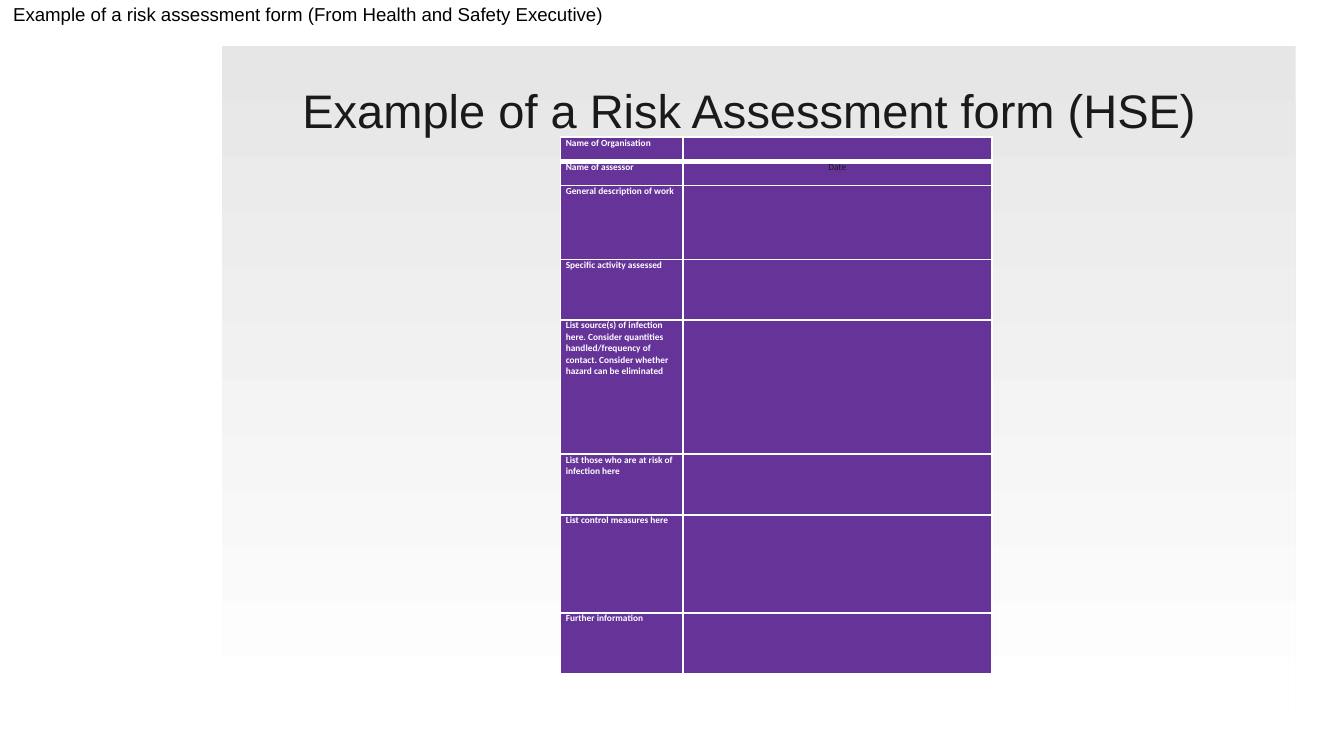
"""Build a slide showing a risk assessment form."""
import lxml.etree
import pptx
import pptx.dml.color
import pptx.enum.shapes
import pptx.enum.text
import pptx.oxml.ns
import pptx.util

Inches = pptx.util.Inches
Pt = pptx.util.Pt
RGB = pptx.dml.color.RGBColor
Align = pptx.enum.text.PP_ALIGN
Anchor = pptx.enum.text.MSO_ANCHOR
qn = pptx.oxml.ns.qn

WHITE = RGB(0xFF, 0xFF, 0xFF)
BLACK = RGB(0, 0, 0)
INK = RGB(0x1A, 0x1A, 0x1A)
GREY = RGB(0xE6, 0xE6, 0xE6)
PURPLE = RGB(0x66, 0x33, 0x99)

COLS = (0.91, 2.3)
ROWS = (
    ("Name of Organisation", "", 0.18),
    ("Name of assessor", "Date", 0.18),
    ("General description of work", "", 0.55),
    ("Specific activity assessed", "", 0.45),
    ("List source(s) of infection here. Consider quantities handled/frequency "
     "of contact. Consider whether hazard can be eliminated", "", 1),
    ("List those who are at risk of infection here", "", 0.45),
    ("List control measures here", "", 0.73),
    ("Further information", "", 0.45),
)


def style(para, face, size, color, bold=False):
    """Format every run of a paragraph."""
    for run in para.runs:
        run.font.name = face
        run.font.size = Pt(size)
        run.font.bold = bold
        run.font.color.rgb = color


def add_panel(slide, left, top, width, height):
    """Draw the shaded panel behind the form."""
    panel = slide.shapes.add_shape(
        pptx.enum.shapes.MSO_SHAPE.RECTANGLE,
        Inches(left), Inches(top), Inches(width), Inches(height))
    panel.shadow.inherit = False
    panel.line.fill.background()
    panel.fill.gradient()
    panel.fill.gradient_angle = 270
    for stop, color in zip(panel.fill.gradient_stops, (GREY, WHITE)):
        stop.color.rgb = color


def add_edges(cell, top, base):
    """Give a cell white borders, with the top and base widths in points."""
    props = cell._tc.get_or_add_tcPr()
    for tag, width in (("lnL", 1), ("lnR", 1), ("lnT", top), ("lnB", base)):
        edge = lxml.etree.SubElement(props, qn("a:" + tag), w=str(Pt(width)))
        fill = lxml.etree.SubElement(edge, qn("a:solidFill"))
        lxml.etree.SubElement(fill, qn("a:srgbClr"), val=str(WHITE))


def fill_cell(cell, text, color, bold, align):
    """Set the text and fill of one form cell."""
    cell.margin_left = cell.margin_right = Inches(0.04)
    cell.margin_top = cell.margin_bottom = 0
    cell.fill.solid()
    cell.fill.fore_color.rgb = PURPLE
    para = cell.text_frame.paragraphs[0]
    para.alignment = align
    if text:
        para.text = text
        style(para, "Calibri", 5, color, bold)
    else:
        lxml.etree.SubElement(para._p, qn("a:endParaRPr"), sz="500")


def add_form(slide, left, top):
    """Place the form table with its top left corner at the given point."""
    frame = slide.shapes.add_table(
        len(ROWS), len(COLS), Inches(left), Inches(top),
        Inches(sum(COLS)), Inches(sum(row[2] for row in ROWS)))
    table = frame.table
    for col, width in zip(table.columns, COLS):
        col.width = Inches(width)
    for idx, (label, entry, height) in enumerate(ROWS):
        table.rows[idx].height = Inches(height)
        first, last = table.cell(idx, 0), table.cell(idx, 1)
        for cell in (first, last):
            add_edges(cell, 3 if idx == 1 else 1, 3 if idx == 0 else 1)
        fill_cell(first, label, WHITE, True, Align.LEFT)
        fill_cell(last, entry, INK, False, Align.CENTER)


def add_title(slide, left, top, width, height):
    """Move the title placeholder to the front and format it."""
    title = slide.shapes.title
    slide.shapes._spTree.append(title._element)
    title.left, title.top = Inches(left), Inches(top)
    title.width, title.height = Inches(width), Inches(height)
    frame = title.text_frame
    frame.text = "Example of a Risk Assessment form (HSE)"
    frame.auto_size = pptx.enum.text.MSO_AUTO_SIZE.NONE
    frame.vertical_anchor = Anchor.BOTTOM
    frame.margin_left = frame.margin_right = 0
    frame.margin_top = frame.margin_bottom = 0
    para = frame.paragraphs[0]
    para.alignment = Align.LEFT
    para.line_spacing = 0.9
    style(para, "Arial", 25.2, INK)


def add_note(slide, left, top, width, height):
    """Place the source line at the top of the slide."""
    box = slide.shapes.add_textbox(
        Inches(left), Inches(top), Inches(width), Inches(height))
    frame = box.text_frame
    frame.text = ("Example of a risk assessment form "
                  "(From Health and Safety Executive)")
    frame.word_wrap = True
    frame.vertical_anchor = Anchor.TOP
    frame.margin_top = Inches(0.02)
    style(frame.paragraphs[0], "Arial", 10, BLACK)


def main():
    """Build and save the slide."""
    deck = pptx.Presentation()
    deck.slide_width = Inches(10)
    deck.slide_height = deck.slide_width * 9 // 16
    slide = deck.slides.add_slide(deck.slide_layouts[5])
    add_panel(slide, 1.65, 0.34, 7.99, 4.96)
    add_form(slide, 4.17, 1.02)
    add_title(slide, 2.25, 0.65, 7.08, 0.38)
    add_note(slide, 0, 0, 10, 0.5)
    deck.save("out.pptx")


if __name__ == "__main__":
    main()
